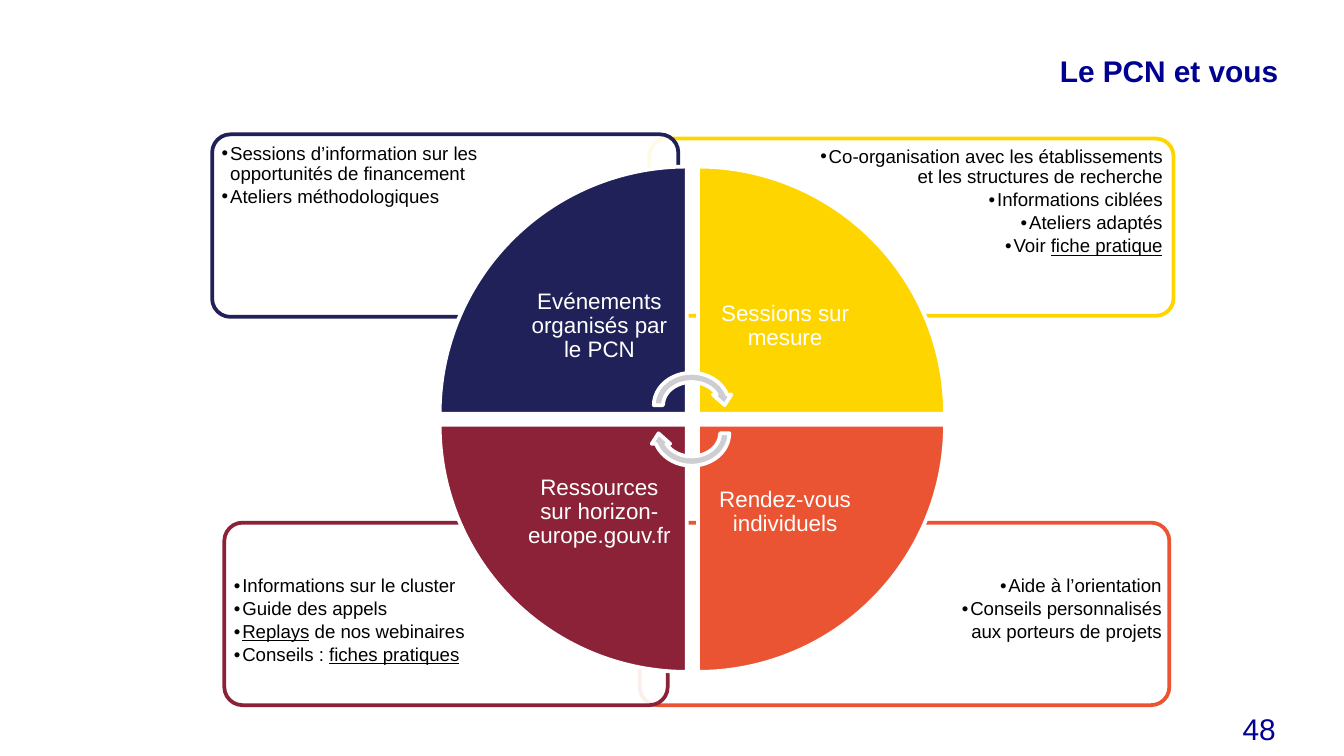
import pptx
import pptx.dml.color
import pptx.enum.shapes
import pptx.enum.text
import pptx.util
from lxml import etree
from pptx.oxml.ns import qn

Cm, Pt = pptx.util.Cm, pptx.util.Pt
RGB = pptx.dml.color.RGBColor
Kind = pptx.enum.shapes.MSO_SHAPE
Align = pptx.enum.text.PP_ALIGN
Anchor = pptx.enum.text.MSO_ANCHOR

BLUE = RGB(0x00, 0x00, 0x91)
NAVY = RGB(0x21, 0x21, 0x5A)
GOLD = RGB(0xFF, 0xD5, 0x00)
CORAL = RGB(0xEA, 0x54, 0x33)
WINE = RGB(0x8C, 0x22, 0x37)
GREY = RGB(0xCD, 0xCD, 0xD2)
WHITE = RGB(0xFF, 0xFF, 0xFF)
BLACK = RGB(0x00, 0x00, 0x00)


class Deck:
    face = "Arial"
    edge = 2

    def __init__(self, slide):
        self.slide = slide

    def place(self, shape, box):
        shape.left, shape.top, shape.width, shape.height = map(Cm, box)

    def frame(self, shape, pad, anchor):
        text = shape.text_frame
        text.word_wrap = True
        text.auto_size = pptx.enum.text.MSO_AUTO_SIZE.NONE
        text.vertical_anchor = anchor
        text.margin_left = text.margin_right = Cm(pad[0])
        text.margin_top = text.margin_bottom = Cm(pad[1])
        return text

    def style(self, para, size, color, align, bold=False, space=1.0):
        para.alignment = align
        para.line_spacing = space
        para.space_before = Pt(0)
        font = para.font
        font.name, font.size, font.bold = self.face, Pt(size), bold
        font.color.rgb = color

    def shape(self, kind, box, fill, line, turn=0):
        shape = self.slide.shapes.add_shape(kind, *map(Cm, box))
        shape.shadow.inherit = False
        shape.fill.solid()
        shape.fill.fore_color.rgb = fill
        shape.line.color.rgb = line
        shape.line.width = Pt(self.edge)
        shape.rotation = turn
        return shape

    def panel(self, box, color):
        shape = self.shape(Kind.ROUNDED_RECTANGLE, box, WHITE, color)
        shape.adjustments[0] = 0.1
        tint = shape.element.spPr.find(qn("a:solidFill"))[0]
        etree.SubElement(tint, qn("a:alpha"), val="90000")

    def list(self, index, box, lines, align):
        """Fill a body placeholder; _x_ underlines x, a leading ~ drops the bullet."""
        shape = self.slide.placeholders[index]
        self.place(shape, box)
        self.slide.shapes.element.append(shape.element)  # bring to front
        text = self.frame(shape, (0.1, 0.1), Anchor.TOP)
        for spot, line in enumerate(lines):
            para = text.add_paragraph() if spot else text.paragraphs[0]
            para.level = 1
            props = para._p.get_or_add_pPr()
            props.set("marL", str(Cm(0.16)))
            props.set("indent", str(-Cm(0.16)))
            if line.startswith("~"):
                etree.SubElement(props, qn("a:buNone"))
            else:
                etree.SubElement(props, qn("a:buChar"), char="•")
            for part, words in enumerate(line.lstrip("~").split("_")):
                if words:
                    run = para.add_run()
                    run.text = words
                    if part % 2:
                        run.font.underline = True
            self.style(para, 10, BLACK, align, space=0.9)
            para.space_after = Pt(1.5)

    def label(self, box, words, size, color, align, pad, anchor, space=1.0):
        shape = self.slide.shapes.add_textbox(*map(Cm, box))
        text = self.frame(shape, pad, anchor)
        para = text.paragraphs[0]
        para.text = words
        self.style(para, size, color, align, space=space)

    def title(self, box, words):
        shape = self.slide.shapes.title
        self.place(shape, box)
        para = self.frame(shape, (0.25, 0.13), Anchor.TOP).paragraphs[0]
        para.text = words
        self.style(para, 16, BLUE, Align.RIGHT, bold=True)


def main():
    show = pptx.Presentation()
    show.slide_width, show.slide_height = Cm(25.4), Cm(14.29)
    # The comparison layout has a title and four bodies
    deck = Deck(show.slides.add_slide(show.slide_layouts[4]))

    deck.title((10.21, 0.86, 14.2, 0.94), "Le PCN et vous")
    deck.label((21.11, 13.31, 3.25, 0.97), "48", 16, BLUE, Align.RIGHT,
               (0.25, 0.13), Anchor.TOP)

    # Corner panels with their lists, back to front
    panels = [
        (4, (12.09, 9.88, 10.01, 3.45), CORAL, (15.19, 10.8, 6.86, 2.44), Align.RIGHT,
         ["Aide à l’orientation", "Conseils personnalisés",
          "~aux porteurs de projets"]),
        (3, (4.24, 9.88, 8.38, 3.45), WINE, (4.32, 10.8, 5.72, 2.44), Align.LEFT,
         ["Informations sur le cluster", "Guide des appels",
          "_Replays_ de nos webinaires", "Conseils : _fiches pratiques_"]),
        (2, (12.27, 2.62, 9.91, 3.35), GOLD, (15.29, 2.69, 6.78, 2.36), Align.RIGHT,
         ["Co-organisation avec les établissements et les structures de recherche",
          "Informations ciblées", "Ateliers adaptés", "Voir _fiche pratique_"]),
        (1, (4.01, 2.54, 8.81, 3.45), NAVY, (4.09, 2.62, 6.02, 2.44), Align.LEFT,
         ["Sessions d’information sur les opportunités de financement",
          "Ateliers méthodologiques"]),
    ]
    for index, box, color, area, align, lines in panels:
        deck.panel(box, color)
        deck.list(index, area, lines, align)

    # Wheel: four wedges, clockwise from top left
    left, top, step, size, inner = 8.31, 3.15, 4.88, 4.67, 3.3
    wheel = [
        (0, 0, NAVY, "Evénements organisés par le PCN"),
        (1, 0, GOLD, "Sessions sur mesure"),
        (1, 1, CORAL, "Rendez-vous individuels"),
        (0, 1, WINE, "Ressources sur horizon-europe.gouv.fr"),
    ]
    for turn, (col, row, color, words) in enumerate(wheel):
        x, y = left + col * step, top + row * step
        deck.shape(Kind.PIE_WEDGE, (x, y, size, size), color, WHITE, 90 * turn)
        # Labels sit in the corner nearest the hub
        x += (1 - col) * (size - inner)
        y += (1 - row) * (size - inner)
        deck.label((x, y, inner, inner), words, 12, WHITE, Align.CENTER,
                   (0.23, 0.23), Anchor.MIDDLE, 0.9)

    # Arrows round the hub
    for y, turn in ((6.96, 0), (7.49, 180)):
        deck.shape(Kind.CIRCULAR_ARROW, (12.27, y, 1.6, 1.4), GREY, WHITE, turn)

    show.save("out.pptx")


if __name__ == "__main__":
    main()
